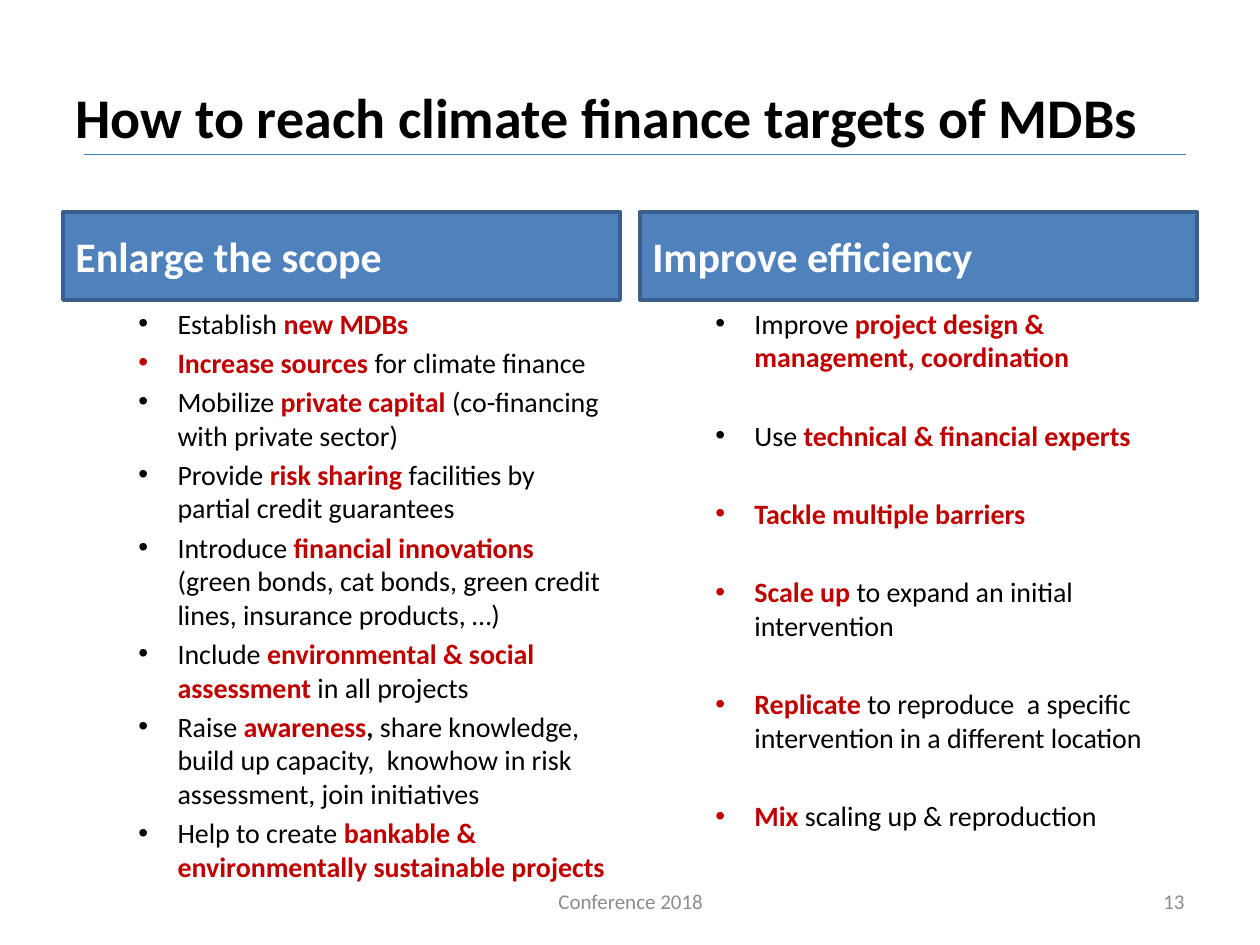
from lxml import etree
from pptx import Presentation
from pptx.dml.color import RGBColor
from pptx.enum.shapes import MSO_CONNECTOR, MSO_SHAPE
from pptx.enum.text import MSO_ANCHOR, PP_ALIGN
from pptx.oxml.ns import qn
from pptx.util import Cm, Pt

COLORS = {"text": "000000", "accent": "C00000", "header": "4F81BD", "border": "3A5F8C",
          "rule": "4B7EBC", "white": "FFFFFF", "footer": "8C8C8C"}

STYLES = {
    "plain": {"size": Pt(16), "bold": False, "color": "text"},
    "key": {"size": Pt(16), "bold": True, "color": "accent"},
    "strong": {"size": Pt(16), "bold": True, "color": "text"},
    "title": {"size": Pt(32), "bold": True, "color": "text"},
    "header": {"size": Pt(24), "bold": True, "color": "white"},
    "footer": {"size": Pt(12), "bold": False, "color": "footer"},
}

TITLE = "How to reach climate finance targets of MDBs"

# Each point is a list of (text, style) spans; gap is the space between points.
COLUMNS = [
    {"header": "Enlarge the scope", "gap": Pt(3.2), "points": [
        [("Establish ", "plain"), ("new MDBs", "key")],
        [("Increase sources ", "key"), ("for climate finance", "plain")],
        [("Mobilize ", "plain"), ("private capital ", "key"),
         ("(co-financing with private sector)", "plain")],
        [("Provide ", "plain"), ("risk sharing ", "key"),
         ("facilities by partial credit guarantees", "plain")],
        [("Introduce ", "plain"), ("financial innovations ", "key"),
         ("(green bonds, cat bonds, green credit lines, insurance products, …)", "plain")],
        [("Include ", "plain"), ("environmental & social assessment ", "key"),
         ("in all projects", "plain")],
        [("Raise ", "plain"), ("awareness", "key"), (", ", "strong"),
         ("share knowledge, build up capacity,  knowhow in risk assessment, "
          "join initiatives", "plain")],
        [("Help to create ", "plain"),
         ("bankable & environmentally sustainable projects", "key")],
    ]},
    {"header": "Improve efficiency", "gap": Pt(25.6), "points": [
        [("Improve ", "plain"), ("project design & management, coordination", "key")],
        [("Use ", "plain"), ("technical & financial experts", "key")],
        [("Tackle multiple barriers", "key")],
        [("Scale up ", "key"), ("to expand an initial intervention", "plain")],
        [("Replicate", "key"),
         (" to reproduce  a specific intervention in a different location", "plain")],
        [("Mix ", "key"), ("scaling up & reproduction", "plain")],
    ]},
]

# text, left, width, alignment
FOOTERS = [("Conference 2018", 8.69, 8.05, PP_ALIGN.CENTER),
           ("13", 18.21, 5.92, PP_ALIGN.RIGHT)]

MARGIN, COLUMN_WIDTH, COLUMN_STEP = 1.27, 11.23, 11.63
HEADER_TOP, HEADER_HEIGHT, LIST_HEIGHT = 4.27, 1.78, 10.97
BULLET_INDENT, BULLET_HANG = Cm(2.06), Cm(0.79)


def rgb(name):
    return RGBColor.from_string(COLORS[name])


def add_span(para, text, style):
    span = para.add_run()
    span.text = text
    span.font.name = "Calibri"
    for key, value in STYLES[style].items():
        if key == "color":
            span.font.color.rgb = rgb(value)
        else:
            setattr(span.font, key, value)


def format_frame(frame, anchor):
    frame.word_wrap = True
    frame.vertical_anchor = anchor


def add_text_box(page, left, top, width, height, anchor):
    box = page.shapes.add_textbox(Cm(left), Cm(top), Cm(width), Cm(height))
    format_frame(box.text_frame, anchor)
    return box.text_frame


def add_bullet(para):
    properties = para._p.get_or_add_pPr()
    properties.set("marL", str(BULLET_INDENT))
    properties.set("indent", str(-BULLET_HANG))
    etree.SubElement(properties, qn("a:buFont")).set("typeface", "Arial")
    etree.SubElement(properties, qn("a:buChar")).set("char", "•")


def add_title(page):
    title = page.shapes.title
    title.left, title.top, title.width, title.height = Cm(MARGIN), Cm(0.76), Cm(22.86), Cm(3.18)
    format_frame(title.text_frame, MSO_ANCHOR.MIDDLE)
    para = title.text_frame.paragraphs[0]
    para.alignment = PP_ALIGN.LEFT
    add_span(para, TITLE, "title")

    rule = page.shapes.add_connector(MSO_CONNECTOR.STRAIGHT, Cm(1.7), Cm(3.12), Cm(23.9), Cm(3.12))
    rule.line.color.rgb = rgb("rule")
    rule.line.width = Pt(0.75)
    etree.SubElement(rule._element.spPr, qn("a:effectLst"))


def add_header(page, text, left):
    header = page.shapes.add_shape(MSO_SHAPE.RECTANGLE, Cm(left), Cm(HEADER_TOP),
                                   Cm(COLUMN_WIDTH), Cm(HEADER_HEIGHT))
    header.shadow.inherit = False
    header.fill.solid()
    header.fill.fore_color.rgb = rgb("header")
    header.line.color.rgb = rgb("border")
    header.line.width = Pt(2)
    format_frame(header.text_frame, MSO_ANCHOR.MIDDLE)
    para = header.text_frame.paragraphs[0]
    para.alignment = PP_ALIGN.LEFT
    para.space_before = Pt(4.8)
    add_span(para, text, "header")


def add_points(page, points, gap, left):
    frame = add_text_box(page, left, HEADER_TOP + HEADER_HEIGHT, COLUMN_WIDTH,
                         LIST_HEIGHT, MSO_ANCHOR.TOP)
    for index, spans in enumerate(points):
        para = frame.add_paragraph() if index else frame.paragraphs[0]
        para.space_before = gap if index else Pt(0)
        add_bullet(para)
        for text, style in spans:
            add_span(para, text, style)


def main():
    deck = Presentation()
    deck.slide_width, deck.slide_height = Cm(25.4), Cm(19.05)
    page = deck.slides.add_slide(deck.slide_layouts[5])
    add_title(page)
    for index, column in enumerate(COLUMNS):
        left = MARGIN + index * COLUMN_STEP
        add_points(page, column["points"], column["gap"], left)
        add_header(page, column["header"], left)
    for text, left, width, alignment in FOOTERS:
        para = add_text_box(page, left, 17.65, width, 1.02, MSO_ANCHOR.MIDDLE).paragraphs[0]
        para.alignment = alignment
        add_span(para, text, "footer")
    deck.save("out.pptx")


if __name__ == "__main__":
    main()
